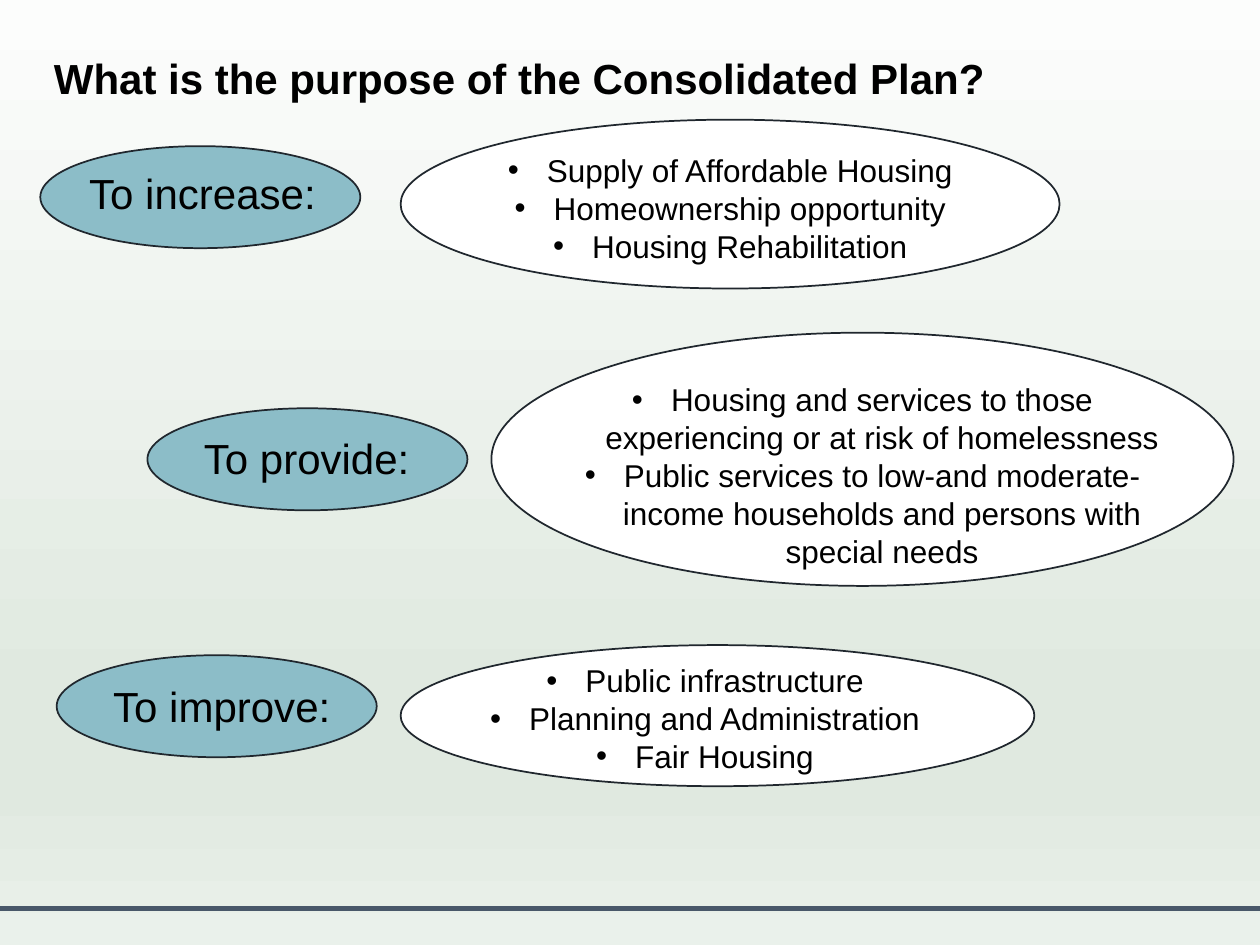
from copy import deepcopy
from dataclasses import dataclass

from lxml import etree
from pptx import Presentation
from pptx.dml.color import RGBColor
from pptx.enum.shapes import MSO_CONNECTOR, MSO_SHAPE
from pptx.enum.text import MSO_AUTO_SIZE, PP_ALIGN
from pptx.oxml.ns import qn
from pptx.util import Inches, Pt

OVAL = MSO_SHAPE.OVAL
LINE = MSO_CONNECTOR.STRAIGHT
GROW = MSO_AUTO_SIZE.SHAPE_TO_FIT_TEXT
LEFT, CENTER = PP_ALIGN.LEFT, PP_ALIGN.CENTER

BLACK = RGBColor(0x00, 0x00, 0x00)
WHITE = RGBColor(0xFF, 0xFF, 0xFF)
TEAL = RGBColor(0x8C, 0xBD, 0xC8)
EDGE = RGBColor(0x20, 0x27, 0x2E)
SLATE = RGBColor(0x49, 0x58, 0x69)
SAGE = RGBColor(0xE0, 0xE9, 0xE0)
STOPS = [
    (0, RGBColor(0xFC, 0xFD, 0xFC)),
    (0.74, SAGE),
    (0.83, SAGE),
    (1, RGBColor(0xEA, 0xF1, 0xEB)),
]

FONT = "Arial"
INDENT = 0.31
GOAL_SIZE = (2.54, 0.81)
LABEL_SIZE = (2.19, 0.5)

Pair = tuple[float, float]
Box = tuple[float, float, float, float]


@dataclass
class Goal:
    label: str
    oval: Pair
    text: Pair
    bubble: Box
    list_box: Box
    items: list[str]


GOALS = [
    Goal("To increase:", (0.32, 1.16), (0.61, 1.28),
         (3.18, 0.95, 5.23, 1.34), (3.9, 1.15, 3.79, 1.01),
         ["Supply of Affordable Housing",
          "Homeownership opportunity",
          "Housing Rehabilitation"]),
    Goal("To provide:", (1.17, 3.24), (1.52, 3.38),
         (3.9, 2.64, 5.89, 2.01), (4.22, 2.97, 5.25, 1.92),
         ["Housing and services to those experiencing or at risk of homelessness",
          "Public services to low-and moderate- income households and persons "
          "with special needs"]),
    Goal("To improve:", (0.45, 5.2), (0.8, 5.35),
         (3.18, 5.12, 5.03, 1.12), (3.7, 5.2, 3.79, 1.01),
         ["Public infrastructure",
          "Planning and Administration",
          "Fair Housing"]),
]


def paint_back(slide) -> None:
    fill = slide.background.fill
    fill.gradient()
    fill.gradient_angle = 270
    stops = slide.element.find(".//" + qn("a:gsLst"))
    while len(stops) < len(STOPS):
        stops.append(deepcopy(stops[0]))
    for stop, (place, color) in zip(fill.gradient_stops, STOPS):
        stop.position = place
        stop.color.rgb = color


def add_rule(slide, top: float) -> None:
    rule = slide.shapes.add_connector(
        LINE, Inches(0), Inches(top), Inches(10), Inches(top))
    rule.line.color.rgb = SLATE
    rule.line.width = Pt(3)
    etree.SubElement(rule._element.spPr, qn("a:effectLst"))


def add_oval(slide, box: Box, color: RGBColor) -> None:
    oval = slide.shapes.add_shape(OVAL, *map(Inches, box))
    oval.shadow.inherit = False
    oval.fill.solid()
    oval.fill.fore_color.rgb = color
    oval.line.color.rgb = EDGE
    oval.line.width = Pt(1)


def add_bullet(para) -> None:
    props = para._p.get_or_add_pPr()
    props.set("marL", str(Inches(INDENT)))
    props.set("indent", str(-Inches(INDENT)))
    etree.SubElement(props, qn("a:buFont"), typeface=FONT)
    etree.SubElement(props, qn("a:buChar"), char="•")


def add_text(slide, box: Box, lines: list[str], size: int, bold: bool = False,
             wrap: bool = True, bullets: bool = False) -> None:
    frame = slide.shapes.add_textbox(*map(Inches, box)).text_frame
    frame.word_wrap = wrap
    frame.auto_size = GROW
    for i, line in enumerate(lines):
        para = frame.add_paragraph() if i else frame.paragraphs[0]
        para.alignment = CENTER if bullets else LEFT
        if bullets:
            add_bullet(para)
        run = para.add_run()
        run.text = line
        run.font.name = FONT
        run.font.size = Pt(size)
        run.font.bold = bold
        run.font.color.rgb = BLACK


def add_goal(slide, goal: Goal) -> None:
    add_oval(slide, goal.oval + GOAL_SIZE, TEAL)
    add_text(slide, goal.text + LABEL_SIZE, [goal.label], 24)
    add_oval(slide, goal.bubble, WHITE)
    add_text(slide, goal.list_box, goal.items, 18, bullets=True)


def main() -> None:
    deck = Presentation()
    deck.slide_width, deck.slide_height = Inches(10), Inches(7.5)
    slide = deck.slides.add_slide(deck.slide_layouts[6])
    paint_back(slide)
    add_rule(slide, 7.21)
    add_text(slide, (0.33, 0.37, 7.65, 0.5),
             ["What is the purpose of the Consolidated Plan?"],
             24, bold=True, wrap=False)
    for goal in GOALS:
        add_goal(slide, goal)
    deck.save("out.pptx")


if __name__ == "__main__":
    main()
